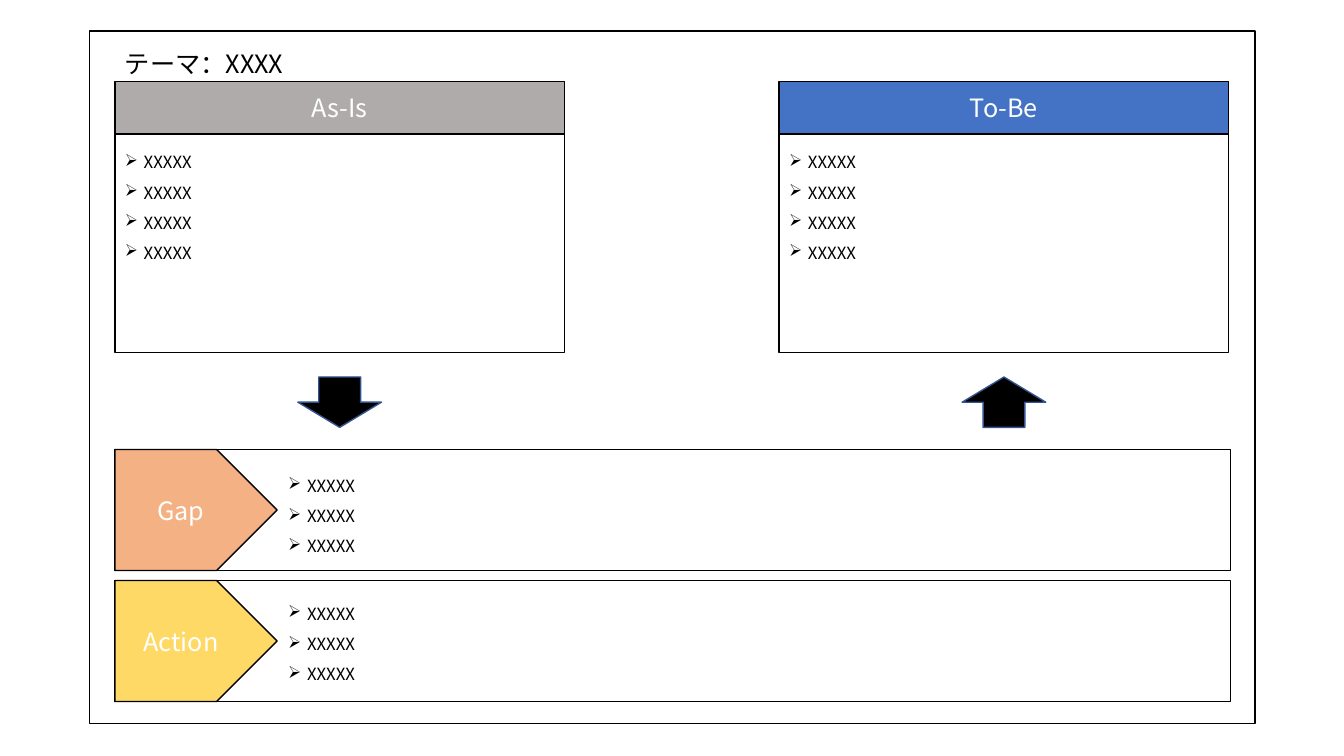
import pptx
import pptx.util
import pptx.dml.color
import pptx.enum.shapes
import pptx.enum.text
import pptx.oxml
import pptx.oxml.ns

Pt = pptx.util.Pt
SHAPE = pptx.enum.shapes.MSO_SHAPE
ALIGN = pptx.enum.text.PP_ALIGN
ANCHOR = pptx.enum.text.MSO_ANCHOR
AUTO_SIZE = pptx.enum.text.MSO_AUTO_SIZE

FONT = "Noto Sans CJK JP"
BLACK, WHITE = "000000", "FFFFFF"
LEFT = 82.08
PANEL_TOP, PANEL_W, HEADER_H, BODY_H = 58.32, 321.12, 37.44, 156.24
ROW_W, ROW_H, TAG_W = 797.04, 86.4, 115.92
ARROW_W, ARROW_H, ARROW_TOP = 59.76, 36, 269.28
INDENT = 13.5


def rgb(color):
    return pptx.dml.color.RGBColor.from_string(color)


def add_bullet(p):
    pPr = p._p.get_or_add_pPr()
    pPr.set("marL", str(Pt(INDENT)))
    pPr.set("indent", str(-Pt(INDENT)))
    ns = pptx.oxml.ns.nsdecls("a")
    pPr.append(pptx.oxml.parse_xml(f'<a:buChar {ns} char="➢"/>'))


def write(tf, text, size=18, color=BLACK, align=ALIGN.LEFT, bullet=False, spacing=None):
    """Fill a text frame, one paragraph for each line of text."""
    for i, line in enumerate(text.split("\n")):
        p = tf.add_paragraph() if i else tf.paragraphs[0]
        p.alignment = align
        if bullet:
            add_bullet(p)
        if spacing:
            p.line_spacing = spacing
        r = p.add_run()
        r.text = line
        r.font.size = Pt(size)
        r.font.color.rgb = rgb(color)
        r.font.name = FONT
        ns = pptx.oxml.ns.nsdecls("a")
        r.font._element.append(pptx.oxml.parse_xml(f'<a:ea {ns} typeface="{FONT}"/>'))


def add_box(slide, x, y, w, h, kind=SHAPE.RECTANGLE, fill=None, line=BLACK, label=None):
    sp = slide.shapes.add_shape(kind, Pt(x), Pt(y), Pt(w), Pt(h))
    sp.shadow.inherit = False
    if fill:
        sp.fill.solid()
        sp.fill.fore_color.rgb = rgb(fill)
    else:
        sp.fill.background()
    sp.line.color.rgb = rgb(line)
    sp.line.width = Pt(1)
    if label:
        sp.text_frame.vertical_anchor = ANCHOR.MIDDLE
        write(sp.text_frame, label, color=WHITE, align=ALIGN.CENTER)
    return sp


def add_text(slide, x, y, w, h, text, wrap=True, **style):
    tf = slide.shapes.add_textbox(Pt(x), Pt(y), Pt(w), Pt(h)).text_frame
    tf.word_wrap = wrap
    tf.auto_size = AUTO_SIZE.SHAPE_TO_FIT_TEXT
    write(tf, text, **style)


def add_list(slide, x, y, w, h, count):
    text = "\n".join(["XXXXX"] * count)
    add_text(slide, x, y, w, h, text, size=12, bullet=True, spacing=1.5)


def add_panel(slide, x, title, color, rotation):
    """Draw a headed panel with a bullet list and a block arrow below it."""
    add_box(slide, x, PANEL_TOP, PANEL_W, HEADER_H, fill=color, label=title)
    add_box(slide, x, PANEL_TOP + HEADER_H, PANEL_W, BODY_H)
    add_list(slide, x, 97.92, PANEL_W, 114.48, 4)
    arrow = add_box(slide, x + (PANEL_W - ARROW_W) / 2, ARROW_TOP, ARROW_W, ARROW_H,
                    kind=SHAPE.DOWN_ARROW, fill=BLACK, line="325491")
    arrow.rotation = rotation


def add_row(slide, y, list_y, title, color):
    """Draw a wide row with a pentagon tag and a bullet list."""
    add_box(slide, LEFT, y, ROW_W, ROW_H)
    add_list(slide, LEFT + TAG_W + 0.72, list_y, 673.2, 70.56, 3)
    add_box(slide, LEFT, y, TAG_W, ROW_H, kind=SHAPE.PENTAGON, fill=color, label=title)


def main():
    prs = pptx.Presentation()
    prs.slide_width, prs.slide_height = Pt(960), Pt(540)
    slide = prs.slides.add_slide(prs.slide_layouts[6])
    add_text(slide, LEFT, 30.96, 135.36, 28.8, "テーマ：XXXX", wrap=False)
    add_panel(slide, LEFT, "As-Is", "AFABAB", 0)
    add_panel(slide, 556.56, "To-Be", "4472C4", 180)
    add_row(slide, 321.12, 329.04, "Gap", "F4B183")
    add_row(slide, 414.72, 420.48, "Action", "FFD966")
    add_box(slide, 64.08, 22.32, 832.32, 494.64)
    prs.save("out.pptx")


if __name__ == "__main__":
    main()
